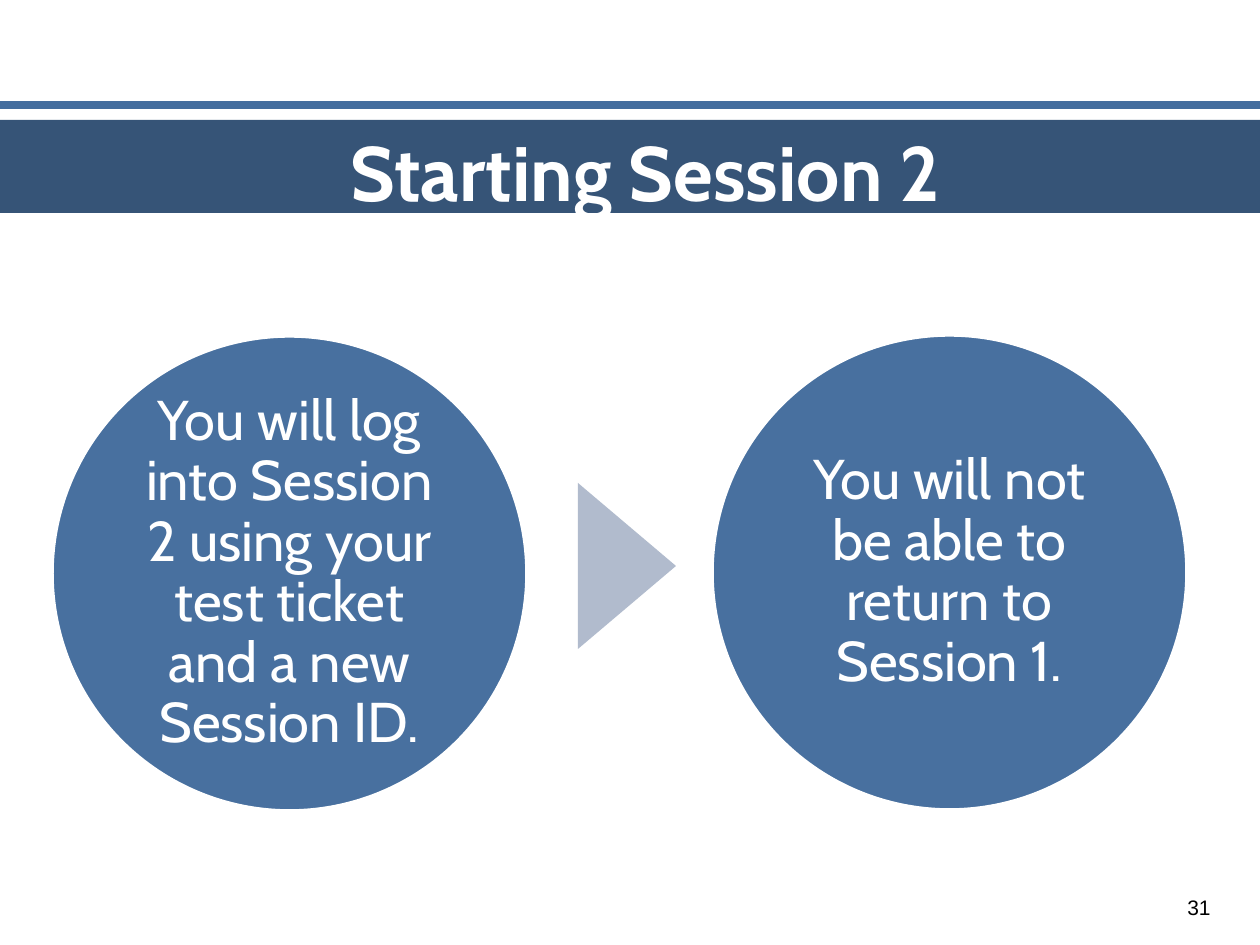
from dataclasses import dataclass

from lxml.etree import SubElement
from pptx import Presentation
from pptx.dml.color import RGBColor
from pptx.enum.shapes import MSO_CONNECTOR, MSO_SHAPE
from pptx.enum.text import MSO_ANCHOR as Anchor, PP_ALIGN
from pptx.oxml.ns import qn
from pptx.util import Emu, Pt

WIDTH, HEIGHT = 1260, 945
EMU_PER_PX = 914400 / 126


@dataclass(frozen=True)
class Theme:
    rule: str = "446D9E"
    banner: str = "365477"
    circle: str = "48709F"
    arrow: str = "B1BBCD"
    white: str = "FFFFFF"
    black: str = "000000"
    font: str = "Cabin"
    number_font: str = "Arial"
    title_size: int = 44
    body_size: int = 32
    number_size: int = 12


def px(n):
    return Emu(round(n * EMU_PER_PX))


def rgb(value):
    return RGBColor.from_string(value)


class SlideBuilder:
    def __init__(self, slide, theme):
        self.shapes = slide.shapes
        self.theme = theme

    def rule(self, y, weight):
        line = self.shapes.add_connector(MSO_CONNECTOR.STRAIGHT, 0, px(y), px(WIDTH), px(y))
        line.line.color.rgb = rgb(self.theme.rule)
        line.line.width = Pt(weight)
        SubElement(line._element.spPr, qn("a:effectLst"))

    def shape(self, kind, box, fill, outline=None):
        sp = self.shapes.add_shape(kind, *map(px, box))
        sp.shadow.inherit = False
        sp.fill.solid()
        sp.fill.fore_color.rgb = rgb(fill)
        if outline:
            sp.line.color.rgb = rgb(outline)
            sp.line.width = Pt(2)
        else:
            sp.line.fill.background()
        return sp

    def set_text(self, sp, text, size, color, font=None, bold=False,
                 anchor=Anchor.MIDDLE, insets=(5, 5, 5, 5), spacing=None):
        """Fill a shape with one centred paragraph; insets run left, top, right, bottom."""
        tf = sp.text_frame
        tf.word_wrap = True
        tf.vertical_anchor = anchor
        tf.margin_left, tf.margin_top, tf.margin_right, tf.margin_bottom = map(px, insets)
        tf.text = text
        p = tf.paragraphs[0]
        p.alignment = PP_ALIGN.CENTER
        if spacing:
            p.line_spacing = spacing
        r = p.runs[0]
        r.font.name = font or self.theme.font
        r.font.size = Pt(size)
        r.font.bold = bold
        r.font.color.rgb = rgb(color)

    def text(self, box, text, size, color, **style):
        self.set_text(self.shapes.add_textbox(*map(px, box)), text, size, color, **style)

    def banner(self, box, title):
        t = self.theme
        sp = self.shape(MSO_SHAPE.RECTANGLE, box, t.banner)
        self.set_text(sp, title, t.title_size, t.white, bold=True,
                      anchor=Anchor.TOP, insets=(32, 4, 0, 0))

    def circle(self, left, top, text, size=475, inset=70):
        t = self.theme
        self.shape(MSO_SHAPE.OVAL, (left, top, size, size), t.circle, t.white)
        side = size - 2 * inset
        self.text((left + inset, top + inset, side, side), text,
                  t.body_size, t.white, spacing=0.9)

    def arrow(self, box):
        sp = self.shape(MSO_SHAPE.ISOSCELES_TRIANGLE, box, self.theme.arrow)
        sp.rotation = 90

    def page_number(self, box, number):
        t = self.theme
        self.text(box, number, t.number_size, t.black, font=t.number_font)


def main():
    prs = Presentation()
    prs.slide_width, prs.slide_height = px(WIDTH), px(HEIGHT)
    s = SlideBuilder(prs.slides.add_slide(prs.slide_layouts[6]), Theme())
    s.rule(105, 4.5)
    s.page_number((1170, 882, 58, 50), "31")
    s.circle(52, 336, "You will log into Session 2 using your test ticket and a new Session ID.")
    s.arrow((544, 517, 166, 98))
    s.circle(712, 335, "You will not be able to return to Session 1.")
    s.banner((0, 120, WIDTH, 93), "Starting Session 2")
    prs.save("out.pptx")


if __name__ == "__main__":
    main()
